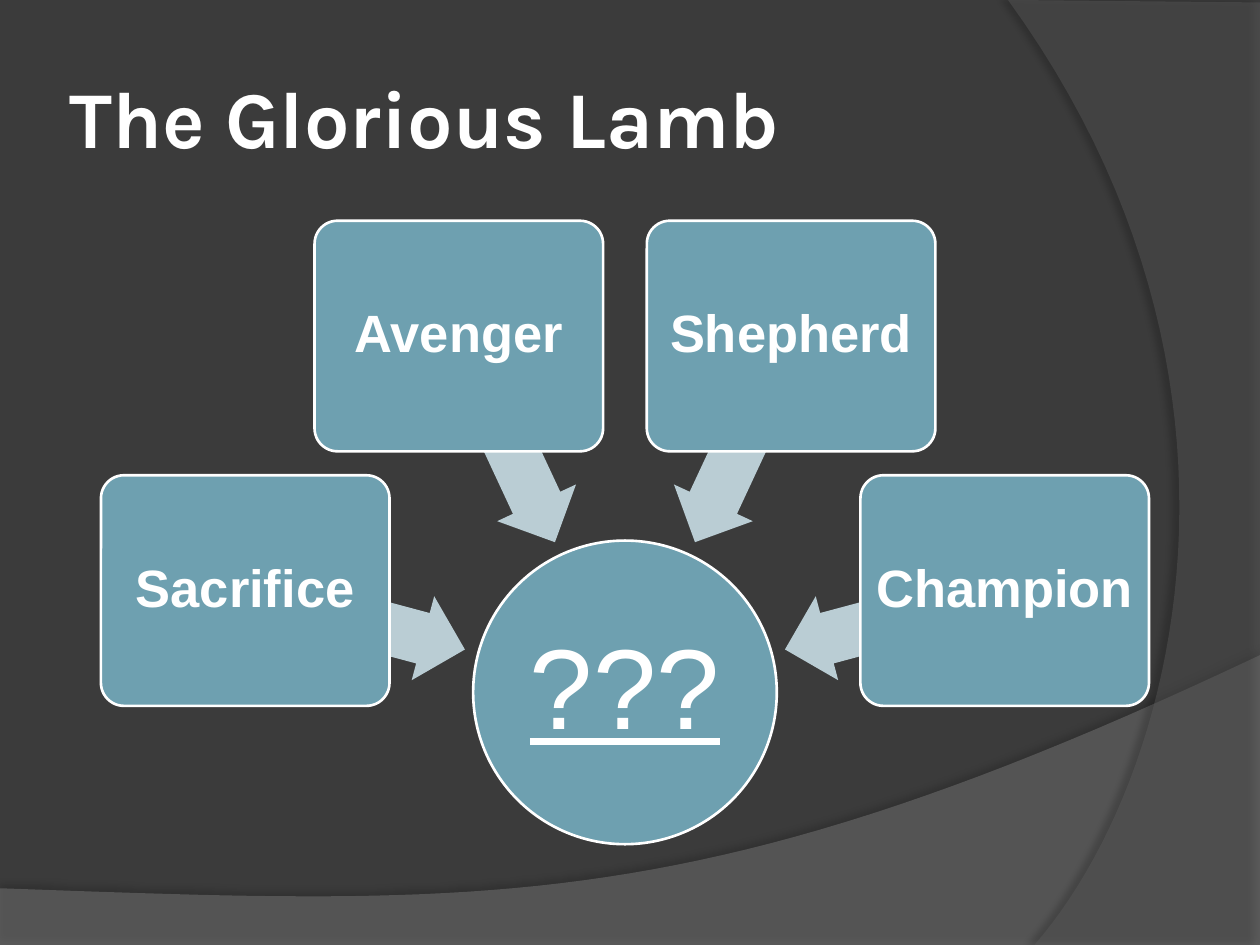
from math import cos, radians, sin

from lxml.etree import SubElement
from pptx import Presentation
from pptx.dml.color import RGBColor
from pptx.enum.shapes import MSO_SHAPE
from pptx.enum.text import MSO_ANCHOR, PP_ALIGN
from pptx.oxml.ns import qn
from pptx.util import Inches, Pt

COLOURS = {
    "ground": "3B3B3B",
    "low_wave": "7F7F7F",
    "side_wave": "5E5E5E",
    "node": "6EA0B0",
    "arrow": "BACDD4",
    "white": "FFFFFF",
    "shadow": "000000",
}
TITLE_FONT = {"name": "Karla", "size": Pt(46), "bold": True}
NODE_FONT = {"name": "Arial", "size": Pt(30), "bold": True}
HUB_FONT = {"name": "Arial", "size": Pt(65), "underline": True}


def colour(name):
    return RGBColor.from_string(COLOURS[name])


def paint(shape, fill, line=None):
    shape.shadow.inherit = False
    shape.fill.solid()
    shape.fill.fore_color.rgb = colour(fill)
    if line:
        shape.line.color.rgb = colour(line)
        shape.line.width = Pt(1.5)
    else:
        shape.line.fill.background()


def write(shape, text, font, align, inset=0.0):
    frame = shape.text_frame
    frame.word_wrap = True
    frame.vertical_anchor = MSO_ANCHOR.MIDDLE
    for side in ("left", "top", "right", "bottom"):
        setattr(frame, f"margin_{side}", Inches(inset))
    para = frame.paragraphs[0]
    para.alignment = align
    span = para.add_run()
    span.text = text
    for key, value in font.items():
        setattr(span.font, key, value)
    span.font.color.rgb = colour("white")
    return para


def curve(start, first, second, end, steps=48):
    """Points along a cubic curve, without its start."""
    points = []
    for step in range(1, steps + 1):
        t = step / steps
        weights = ((1 - t) ** 3, 3 * t * (1 - t) ** 2, 3 * t * t * (1 - t), t ** 3)
        points.append(tuple(
            sum(weight * value for weight, value in zip(weights, values))
            for values in zip(start, first, second, end)
        ))
    return points


def add_wave(page, box, points, fill, opacity, shadow):
    """Translucent outline; points are inches from the box corner."""
    left, top = box
    places = [(Inches(left + x), Inches(top + y)) for x, y in points]
    builder = page.shapes.build_freeform(*places[0], scale=1.0)
    builder.add_line_segments(places[1:], close=True)
    wave = builder.convert_to_shape()
    paint(wave, fill)
    properties = wave.element.spPr
    tone = properties.find(qn("a:solidFill"))[0]
    SubElement(tone, qn("a:alpha"), val=str(opacity * 1000))

    shade, blur, distance, direction = shadow
    effect = SubElement(
        properties.find(qn("a:effectLst")), qn("a:outerShdw"),
        blurRad=str(Pt(blur)), dist=str(Pt(distance)),
        dir=str(direction * 60000), algn="ctr", rotWithShape="0",
    )
    tone = SubElement(effect, qn("a:srgbClr"), val=COLOURS["shadow"])
    SubElement(tone, qn("a:alpha"), val=str(shade * 1000))


def add_backdrop(page):
    page.background.fill.solid()
    page.background.fill.fore_color.rgb = colour("ground")
    low = [(0, 1.85), (0, 2.3), (10, 2.3), (10, 0)]
    low += curve((10, 0), (5.59, 2.09), (3.91, 1.99), (0, 1.85))
    add_wave(page, (0, 5.2), low, "low_wave", 45, (35, 4, 3.5, 270))
    side = [(2, 0.02), (2, 7.5), (0.21, 7.5)]
    side += curve((0.21, 7.5), (1.35, 6.19), (2.18, 3), (0, 0))
    add_wave(page, (8, 0), side, "side_wave", 40, (45, 4, 4, 180))


def add_title(page, box, text):
    title = page.shapes.add_textbox(*map(Inches, box))
    write(title, text, TITLE_FONT, PP_ALIGN.LEFT, 0.05)


def add_centred(page, kind, centre, size):
    (x, y), (width, height) = centre, size
    return page.shapes.add_shape(
        kind, Inches(x - width / 2), Inches(y - height / 2),
        Inches(width), Inches(height))


def add_node(page, kind, centre, size, text, font):
    node = add_centred(page, kind, centre, size)
    paint(node, "node", "white")
    write(node, text, font, PP_ALIGN.CENTER).line_spacing = 0.9
    return node


def add_radial(page, box, hub_text, labels):
    """Hub at the foot of the box, with labels fanned out above it."""
    left, top, width, height = box
    hub_size = 2.41
    hub = (left + width / 2, top + height - hub_size / 2)
    add_node(page, MSO_SHAPE.OVAL, hub, (hub_size, hub_size), hub_text, HUB_FONT)

    def around(radius, angle):
        turn = radians(angle)
        return hub[0] + radius * cos(turn), hub[1] + radius * sin(turn)

    for index, label in enumerate(labels):
        angle = 195 + 50 * index
        # Arrow towards the hub
        arrow = add_centred(page, MSO_SHAPE.LEFT_ARROW, around(2.22, angle), (1.81, 0.69))
        arrow.adjustments[0] = 0.6
        arrow.adjustments[1] = 0.5
        arrow.rotation = angle
        paint(arrow, "arrow")
        # Label box over the arrow's tail
        node = add_node(page, MSO_SHAPE.ROUNDED_RECTANGLE, around(3.12, angle),
                        (2.29, 1.83), label, NODE_FONT)
        node.adjustments[0] = 0.1


def main():
    deck = Presentation()
    deck.slide_width, deck.slide_height = Inches(10), Inches(7.5)
    page = deck.slides.add_slide(deck.slide_layouts[6])
    add_backdrop(page)
    add_title(page, (0.5, 0.3, 8.17, 1.25), "The Glorious Lamb")
    add_radial(page, (0.8, 1.75, 8.32, 4.95), "???",
               ["Sacrifice", "Avenger", "Shepherd", "Champion"])
    deck.save("out.pptx")


if __name__ == "__main__":
    main()
